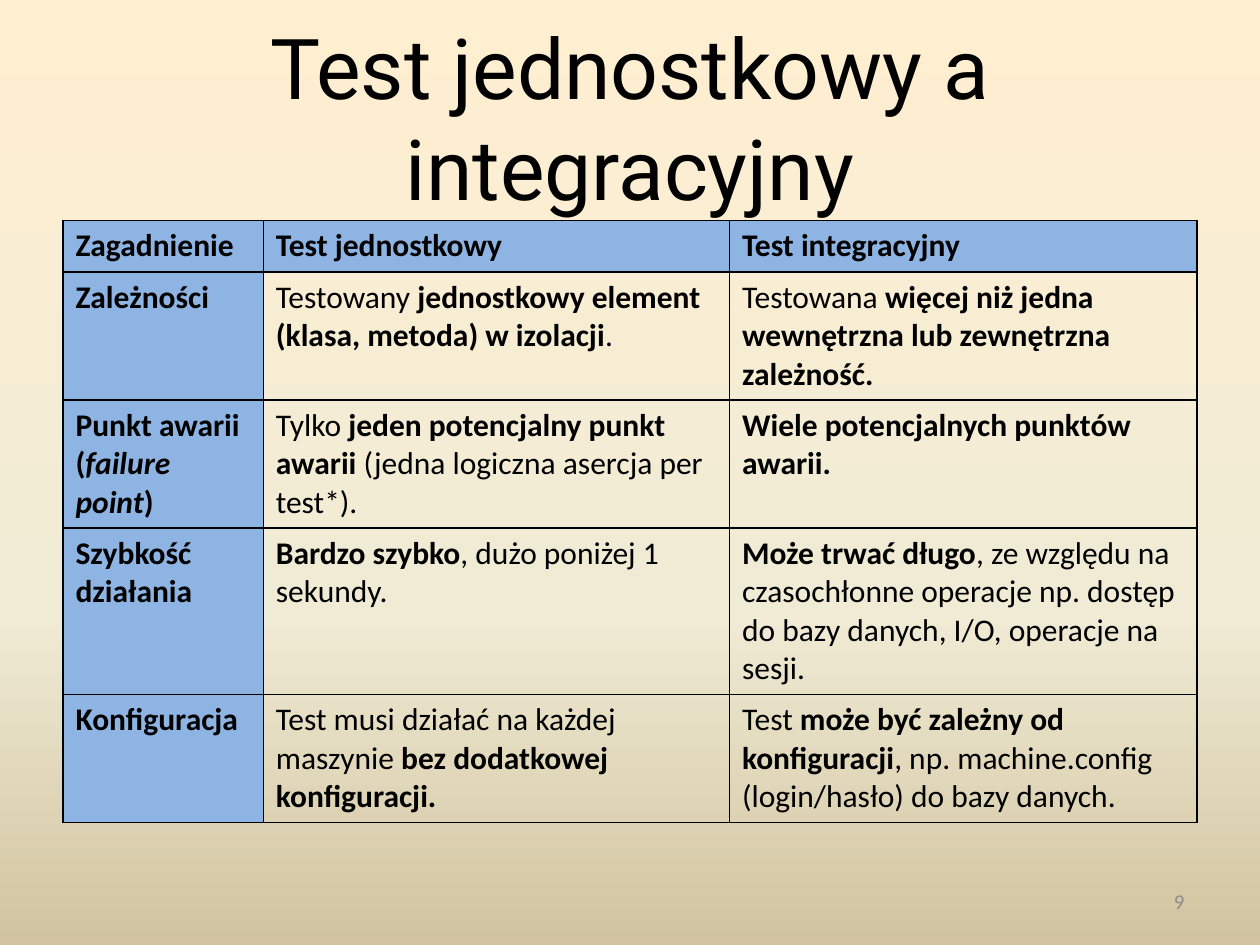
from copy import deepcopy

from lxml.etree import SubElement
from pptx import Presentation
from pptx.dml.color import RGBColor
from pptx.enum.text import MSO_ANCHOR as Anchor, MSO_AUTO_SIZE as AutoSize, PP_ALIGN as Align
from pptx.oxml.ns import qn
from pptx.util import Inches, Pt

BLACK, LABEL_BLUE, NUMBER_GREY = "000000", "8EB4E3", "8C8C8C"
BACKGROUND = [(0, "FFEFD1"), (0.65, "F0EBD5"), (1, "D1C39F")]
MARGIN, CONTENT_WIDTH = 0.5, 9
COLUMN_WIDTHS = [1.59, 3.7, 3.71]
ROW_HEIGHT = 0.41
TITLE_FORMAT = {"name": "Roboto", "size": Pt(48)}
CELL_FORMAT = {"name": "Calibri", "size": Pt(18)}
NUMBER_FORMAT = {"name": "Calibri", "size": Pt(12)}

# ** switches bold and _ switches italic
COMPARISON = [
    ["**Zagadnienie**", "**Test jednostkowy**", "**Test integracyjny**"],
    ["**Zależności**",
     "Testowany **jednostkowy element (klasa, metoda) w izolacji**.",
     "Testowana **więcej niż jedna wewnętrzna lub zewnętrzna zależność.**"],
    ["**Punkt awarii**\n**(_failure point_)**",
     "Tylko **jeden potencjalny punkt awarii** (jedna logiczna asercja per test*).",
     "**Wiele potencjalnych punktów awarii.**"],
    ["**Szybkość**\n**działania**",
     "**Bardzo szybko**, dużo poniżej 1 sekundy.",
     "**Może trwać długo**, ze względu na czasochłonne operacje np. dostęp "
     "do bazy danych, I/O, operacje na sesji."],
    ["**Konfiguracja**",
     "Test musi działać na każdej maszynie **bez dodatkowej konfiguracji.**",
     "Test **może być zależny od konfiguracji**, np. machine.config "
     "(login/hasło) do bazy danych."],
]


def color(hex_value):
    return RGBColor.from_string(hex_value)


def add_run(paragraph, text, font_format, hex_value=BLACK, **extra):
    run = paragraph.add_run()
    run.text = text
    for name, value in {**font_format, **extra}.items():
        setattr(run.font, name, value)
    run.font.color.rgb = color(hex_value)


def add_marked_text(paragraph, marked):
    """Write text as runs, following its bold and italic marks."""
    for bold_index, part in enumerate(marked.split("**")):
        for italic_index, text in enumerate(part.split("_")):
            if text:
                add_run(paragraph, text, CELL_FORMAT,
                        bold=bold_index % 2 == 1, italic=italic_index % 2 == 1)


def place(shape, left, top, width, height):
    shape.left, shape.top, shape.width, shape.height = map(
        Inches, (left, top, width, height))


def paint_background(slide):
    fill = slide.background.fill
    fill.gradient()
    fill.gradient_angle = 270
    last_stop = list(slide.element.iter(qn("a:gs")))[-1]
    last_stop.addnext(deepcopy(last_stop))
    for stop, (position, hex_value) in zip(fill.gradient_stops, BACKGROUND):
        stop.position = position
        stop.color.rgb = color(hex_value)


def set_title(slide, text):
    title = slide.shapes.title
    place(title, MARGIN, 0.3, CONTENT_WIDTH, 1.25)
    frame = title.text_frame
    frame.auto_size = AutoSize.NONE
    frame.vertical_anchor = Anchor.MIDDLE
    frame.paragraphs[0].alignment = Align.CENTER
    add_run(frame.paragraphs[0], text, TITLE_FORMAT)


def outline_cell(cell):
    properties = cell._tc.get_or_add_tcPr()
    for side in ("a:lnL", "a:lnR", "a:lnT", "a:lnB"):
        line = SubElement(properties, qn(side), w=str(Pt(1)))
        solid = SubElement(line, qn("a:solidFill"))
        SubElement(solid, qn("a:srgbClr"), val=BLACK)


def fill_cell(cell, marked, is_label):
    outline_cell(cell)
    if is_label:
        cell.fill.solid()
        cell.fill.fore_color.rgb = color(LABEL_BLUE)
    else:
        cell.fill.background()
    frame = cell.text_frame
    for index, line in enumerate(marked.split("\n")):
        paragraph = frame.add_paragraph() if index else frame.paragraphs[0]
        add_marked_text(paragraph, line)


def add_comparison(slide):
    row_count = len(COMPARISON)
    table = slide.shapes.add_table(
        row_count, len(COLUMN_WIDTHS), Inches(MARGIN), Inches(1.75),
        Inches(CONTENT_WIDTH), Inches(ROW_HEIGHT * row_count)).table
    table.first_row = table.horz_banding = False
    for column, width in zip(table.columns, COLUMN_WIDTHS):
        column.width = Inches(width)
    for r, texts in enumerate(COMPARISON):
        table.rows[r].height = Inches(ROW_HEIGHT)
        for c, marked in enumerate(texts):
            fill_cell(table.cell(r, c), marked, is_label=r == 0 or c == 0)


def add_page_number(slide, number):
    box = slide.shapes.add_textbox(*map(Inches, (7.17, 6.95, 2.33, 0.4)))
    frame = box.text_frame
    frame.word_wrap = True
    frame.vertical_anchor = Anchor.MIDDLE
    frame.paragraphs[0].alignment = Align.RIGHT
    add_run(frame.paragraphs[0], number, NUMBER_FORMAT, NUMBER_GREY)


def main():
    deck = Presentation()
    deck.slide_width, deck.slide_height = Inches(10), Inches(7.5)
    slide = deck.slides.add_slide(deck.slide_layouts.get_by_name("Title Only"))
    paint_background(slide)
    set_title(slide, "Test jednostkowy a integracyjny")
    add_comparison(slide)
    add_page_number(slide, "9")
    deck.save("out.pptx")


if __name__ == "__main__":
    main()
